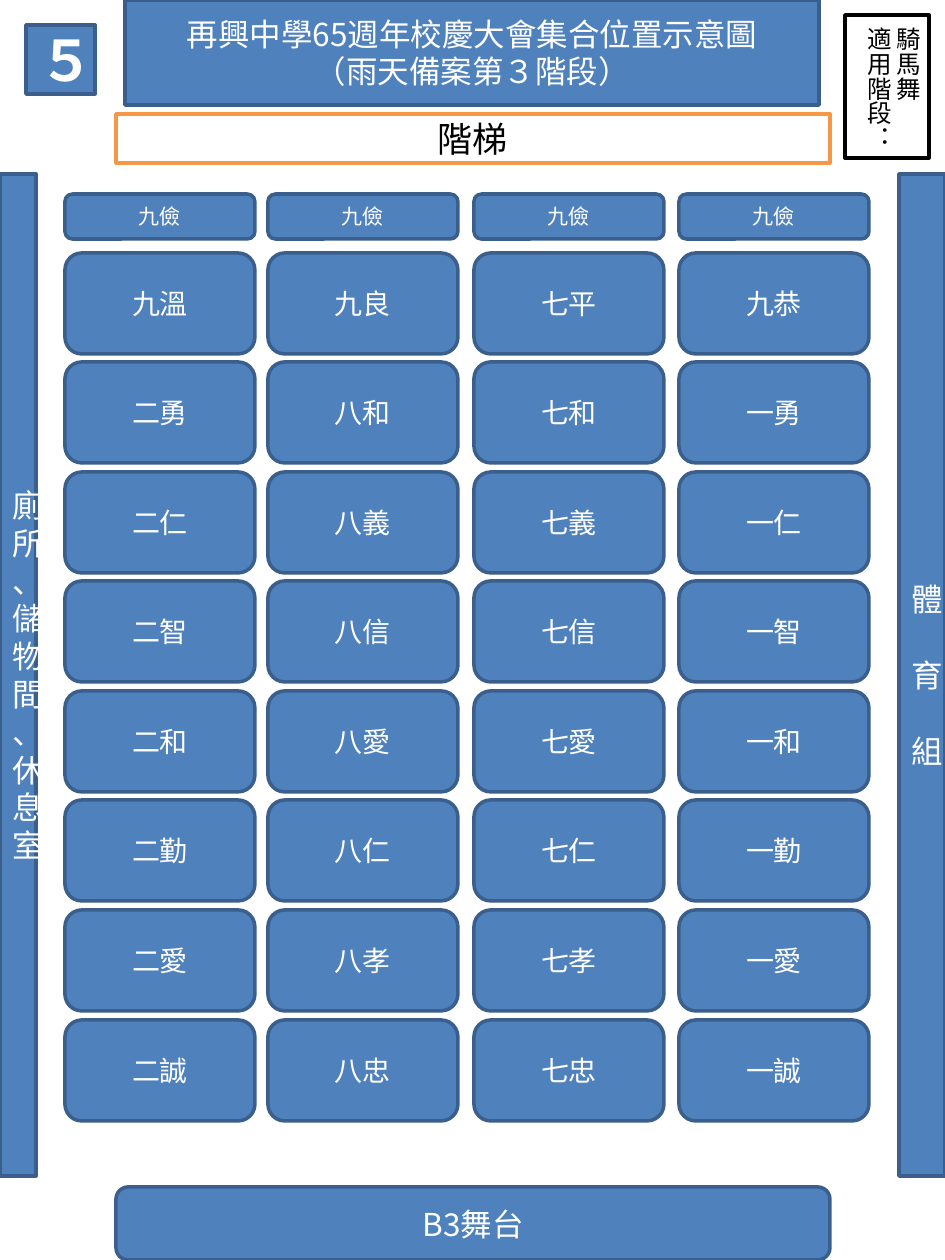
from dataclasses import dataclass

from lxml.etree import SubElement
from pptx import Presentation
from pptx.dml.color import RGBColor
from pptx.enum.shapes import MSO_SHAPE as Kind
from pptx.enum.text import MSO_ANCHOR as Anchor, MSO_AUTO_SIZE as Fit, PP_ALIGN as Align
from pptx.oxml.ns import qn
from pptx.util import Emu, Pt

PX = 914400 // 126
BLUE = RGBColor(0x4F, 0x81, 0xBD)
NAVY = RGBColor(0x3A, 0x5F, 0x8C)
ORANGE = RGBColor(0xF7, 0x96, 0x46)
WHITE = RGBColor(0xFF, 0xFF, 0xFF)
BLACK = RGBColor(0x00, 0x00, 0x00)
NOTO = "Noto Sans CJK SC"

LEFTS = (65, 268, 474, 679)
TOP, SPAN = 253, 767
GRADES = (
    ("九溫", "二勇", "二仁", "二智", "二和", "二勤", "二愛", "二誠"),
    ("九良", "八和", "八義", "八信", "八愛", "八仁", "八孝", "八忠"),
    ("七平", "七和", "七義", "七信", "七愛", "七仁", "七孝", "七忠"),
    ("九恭", "一勇", "一仁", "一智", "一和", "一勤", "一愛", "一誠"),
)


@dataclass(frozen=True)
class Box:
    """A labelled box, with its place in px and its text size in points."""

    text: str
    left: int
    top: int
    width: int
    height: int
    size: int = 18
    kind: Kind = Kind.ROUNDED_RECTANGLE
    fill: RGBColor = BLUE
    line: RGBColor = NAVY
    ink: RGBColor = WHITE
    font: str = NOTO
    bold: bool = False
    gap: float = 0
    upright: bool = False


TITLE = Box("再興中學65週年校慶大會集合位置示意圖\n（雨天備案第３階段）", 125, 0, 694, 105)
HALL = (
    Box("階梯", 116, 114, 714, 49, 20, Kind.RECTANGLE, WHITE, ORANGE, BLACK),
    Box("體\n育\n組", 899, 174, 46, 1002, kind=Kind.RECTANGLE, gap=21.7),
    Box("廁所、儲物間、休息室", 0, 174, 36, 1002, kind=Kind.RECTANGLE),
    Box("B3舞台", 116, 1187, 714, 73),
)
NOTES = (
    Box("騎馬舞\n適用階段：", 845, 15, 84, 143, 14, Kind.RECTANGLE, WHITE, BLACK, BLACK, upright=True),
    Box("５", 26, 25, 69, 69, 32, Kind.RECTANGLE, font="Calibri", bold=True),
)


def style(shape, box: Box) -> None:
    """Give a shape the paint and text of its box."""
    shape.fill.solid()
    shape.fill.fore_color.rgb = box.fill
    shape.line.color.rgb = box.line
    shape.line.width = Pt(2)
    frame = shape.text_frame
    frame.text = box.text
    frame.word_wrap = True
    frame.auto_size = Fit.NONE
    frame.vertical_anchor = Anchor.TOP if box.upright else Anchor.MIDDLE
    if box.upright:
        frame._txBody.bodyPr.set("vert", "eaVert")
    for i, para in enumerate(frame.paragraphs):
        para.alignment = Align.LEFT if box.upright else Align.CENTER
        if i and box.gap:
            para.space_before = Pt(box.gap)
        font = para.font
        font.size = Pt(box.size)
        font.bold = box.bold
        font.color.rgb = box.ink
        font.name = box.font
        SubElement(font._element, qn("a:ea"), typeface=box.font)


def place(box: Box) -> tuple[Emu, ...]:
    """Turn the px of a box into EMU."""
    return tuple(Emu(n * PX) for n in (box.left, box.top, box.width, box.height))


def draw(shapes, box: Box) -> None:
    """Add a box to a slide or group."""
    shape = shapes.add_shape(box.kind, *place(box))
    shape.shadow.inherit = False
    style(shape, box)


def head(shape, box: Box) -> None:
    """Move the title and give it round corners."""
    shape.left, shape.top, shape.width, shape.height = place(box)
    geom = SubElement(shape._element.spPr, qn("a:prstGeom"), prst="roundRect")
    SubElement(geom, qn("a:avLst"))
    style(shape, box)


def main() -> None:
    """Build the assembly plan."""
    deck = Presentation()
    deck.slide_width, deck.slide_height = Emu(945 * PX), Emu(1260 * PX)
    slide = deck.slides.add_slide(deck.slide_layouts[5])
    head(slide.shapes.title, TITLE)
    for box in HALL:
        draw(slide.shapes, box)
    grid = slide.shapes.add_group_shape().shapes
    for left, grade in zip(LEFTS, GRADES):
        draw(grid, Box("九儉", left, 194, 190, 45, 12))
        for row, name in enumerate(grade):
            top = TOP + row * SPAN // (len(grade) - 1)
            draw(grid, Box(name, left, top, 190, 101, 16))
    for box in NOTES:
        draw(slide.shapes, box)
    deck.save("out.pptx")


if __name__ == "__main__":
    main()
